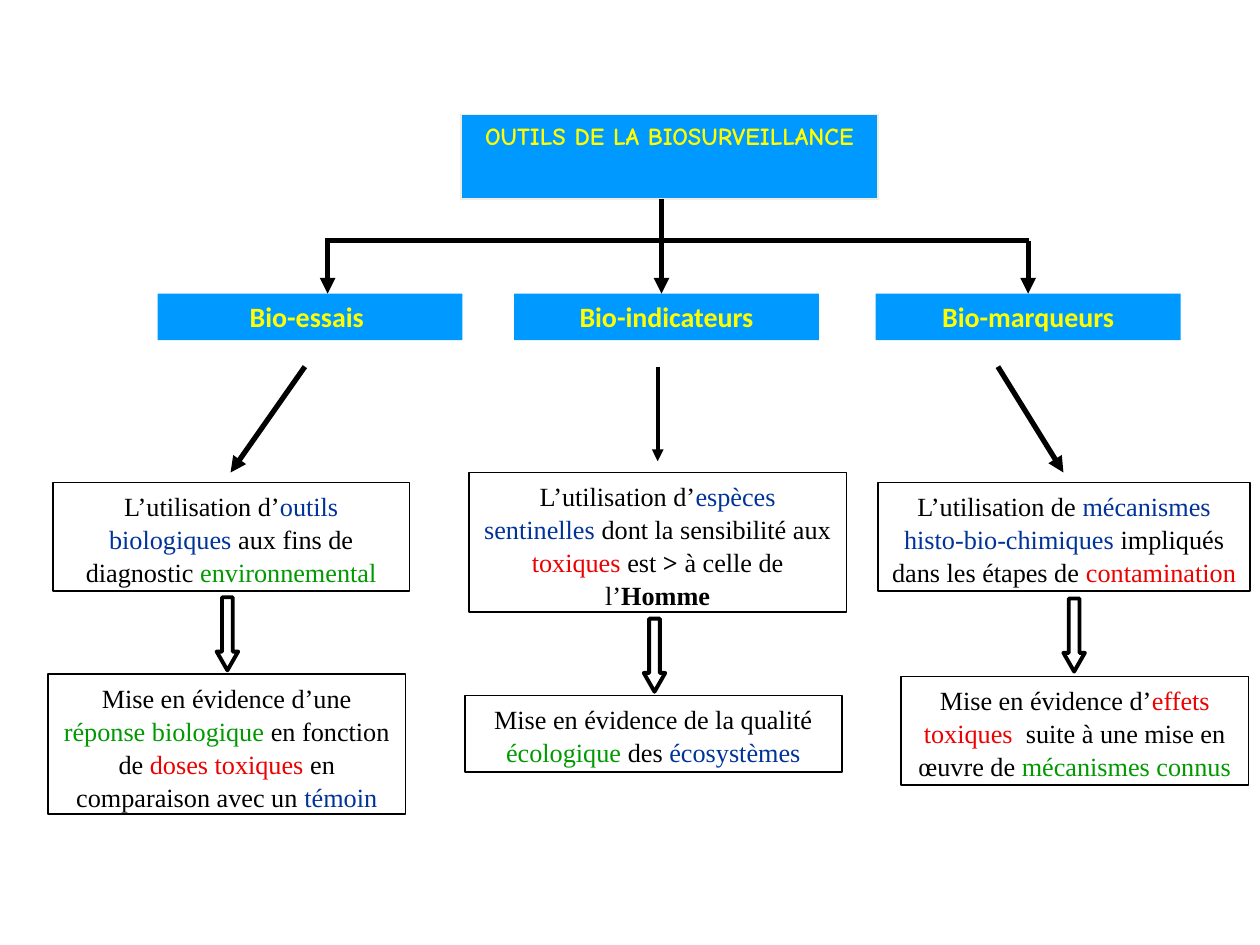
import pptx
import pptx.dml.color
import pptx.enum.shapes
import pptx.enum.text
import pptx.oxml
import pptx.oxml.ns
import pptx.util
from dataclasses import dataclass
from typing import Optional

Inches = pptx.util.Inches
Pt = pptx.util.Pt

COLORS = {
    "black": "000000", "blue": "003399", "green": "009900", "red": "EC0000",
    "yellow": "FFFF00", "banner": "0099FF", "edge": "EEECE1",
}
BODY_FONT = "Times New Roman"


@dataclass
class Span:
    text: str
    color: str = "black"
    bold: bool = False


@dataclass
class Note:
    left: float
    top: float
    width: float
    height: float
    spans: list[Span]


@dataclass
class Line:
    x1: float
    y1: float
    x2: float
    y2: float
    weight: float = 3
    arrow: bool = True


@dataclass
class Branch:
    heading: str
    left: float
    drop_x: float
    link: Line
    use: Note
    block_left: float
    block_top: float
    result: Note


def rgb(name: str):
    return pptx.dml.color.RGBColor.from_string(COLORS[name])


def fill_shape(shape, color: str) -> None:
    shape.fill.solid()
    shape.fill.fore_color.rgb = rgb(color)


def outline(shape, color: str, weight: float) -> None:
    shape.line.color.rgb = rgb(color)
    shape.line.width = Pt(weight)


def write(shape, spans: list[Span], font: str, size: float, spacing: float = 1.0) -> None:
    frame = shape.text_frame
    frame.word_wrap = True
    frame.auto_size = pptx.enum.text.MSO_AUTO_SIZE.NONE
    frame.vertical_anchor = pptx.enum.text.MSO_ANCHOR.TOP
    para = frame.paragraphs[0]
    para.alignment = pptx.enum.text.PP_ALIGN.CENTER
    para.line_spacing = spacing
    for span in spans:
        run = para.add_run()
        run.text = span.text
        run.font.name = font
        run.font.size = Pt(size)
        run.font.bold = span.bold
        run.font.color.rgb = rgb(span.color)


def add_box(page, left: float, top: float, width: float, height: float):
    return page.shapes.add_textbox(Inches(left), Inches(top), Inches(width), Inches(height))


def add_note(page, note: Note) -> None:
    box = add_box(page, note.left, note.top, note.width, note.height)
    outline(box, "black", 1)
    write(box, note.spans, BODY_FONT, 15, 1.05)


def add_line(page, line: Line):
    connector = page.shapes.add_connector(
        pptx.enum.shapes.MSO_CONNECTOR.STRAIGHT,
        Inches(line.x1), Inches(line.y1), Inches(line.x2), Inches(line.y2))
    outline(connector, "black", line.weight)
    if line.arrow:
        pptx.oxml.ns.qn("a:tailEnd")
        tail = connector.line._get_or_add_ln().makeelement(
            pptx.oxml.ns.qn("a:tailEnd"), {"type": "triangle"})
        connector.line._get_or_add_ln().append(tail)
    properties = connector._element.spPr
    properties.append(properties.makeelement(pptx.oxml.ns.qn("a:effectLst"), {}))
    return connector


def add_block_arrow(page, left: float, top: float) -> None:
    arrow = page.shapes.add_shape(
        pptx.enum.shapes.MSO_SHAPE.DOWN_ARROW,
        Inches(left), Inches(top), Inches(0.17), Inches(0.58))
    arrow.adjustments[0] = 0.5
    arrow.adjustments[1] = 0.875
    arrow.shadow.inherit = False
    arrow.fill.background()
    outline(arrow, "black", 2.25)


BAR_Y, HEADING_Y = 1.91, 2.33
TRUNK_X = 5.25

BRANCHES = [
    Branch(
        "Bio-essais ", 1.25, 2.6, Line(2.42, 2.91, 1.83, 3.75),
        Note(0.42, 3.83, 2.83, 0.86, [
            Span("L’utilisation d’"), Span("outils biologiques ", "blue"),
            Span("aux fins de diagnostic "), Span("environnemental", "green")]),
        1.72, 4.74,
        Note(0.38, 5.35, 2.84, 1.11, [
            Span("Mise en évidence d’une "), Span("réponse biologique", "green"),
            Span(" en fonction de "), Span("doses toxiques", "red"),
            Span(" en comparaison avec un"), Span(" témoin", "blue")])),
    Branch(
        "Bio-indicateurs", 4.08, TRUNK_X, Line(5.22, 2.91, 5.22, 3.66, 2.25),
        Note(3.72, 3.75, 3, 1.11, [
            Span("L’utilisation d’"), Span("espèces sentinelles ", "blue"),
            Span("dont la sensibilité aux "), Span("toxiques ", "red"), Span("est "),
            Span(">", bold=True), Span(" à celle de l’"), Span("Homme", bold=True)]),
        5.11, 4.91,
        Note(3.69, 5.52, 2.99, 0.61, [
            Span("Mise en évidence de la qualité "), Span("écologique ", "green"),
            Span("des "), Span("écosystèmes", "blue")])),
    Branch(
        "Bio-marqueurs", 6.95, 8.16, Line(7.92, 2.91, 8.44, 3.75),
        Note(6.97, 3.83, 2.95, 0.86, [
            Span("L’utilisation de "), Span("mécanismes histo-bio-chimiques ", "blue"),
            Span("impliqués dans les étapes de "), Span("contamination", "red")]),
        8.44, 4.75,
        Note(7.15, 5.37, 2.76, 0.86, [
            Span("Mise en évidence d’"), Span("effets toxiques  ", "red"),
            Span("suite à une mise en œuvre de "), Span("mécanismes connus", "green")])),
]


def add_branch(page, branch: Branch) -> None:
    width = 2.42
    heading = add_box(page, branch.left, HEADING_Y, width, 0.37)
    fill_shape(heading, "banner")
    write(heading, [Span(branch.heading, "yellow", True)], "Calibri", 16)

    # Arrow from the crossbar, joined when it meets the middle of the heading
    drop = add_line(page, Line(branch.drop_x, BAR_Y, branch.drop_x, HEADING_Y))
    if abs(branch.left + width / 2 - branch.drop_x) < 0.01:
        drop.end_connect(heading, 0)

    # Use, then result
    add_line(page, branch.link)
    add_note(page, branch.use)
    add_block_arrow(page, branch.block_left, branch.block_top)
    add_note(page, branch.result)


def main() -> None:
    deck = pptx.Presentation()
    deck.slide_width, deck.slide_height = Inches(10), Inches(7.5)
    page = deck.slides.add_slide(deck.slide_layouts[5])

    # Title banner
    title = page.shapes.title
    title.left, title.top = Inches(3.66), Inches(0.91)
    title.width, title.height = Inches(3.31), Inches(0.67)
    fill_shape(title, "banner")
    outline(title, "edge", 0.75)
    write(title, [Span("OUTILS DE LA BIOSURVEILLANCE", "yellow", True)], "Comic Neue", 14)

    # Trunk and crossbar
    add_line(page, Line(TRUNK_X, 1.58, TRUNK_X, BAR_Y, arrow=False))
    add_line(page, Line(2.58, BAR_Y, 8.17, BAR_Y, arrow=False))

    # Three families of tools
    for branch in BRANCHES:
        add_branch(page, branch)

    deck.save("out.pptx")


if __name__ == "__main__":
    main()
